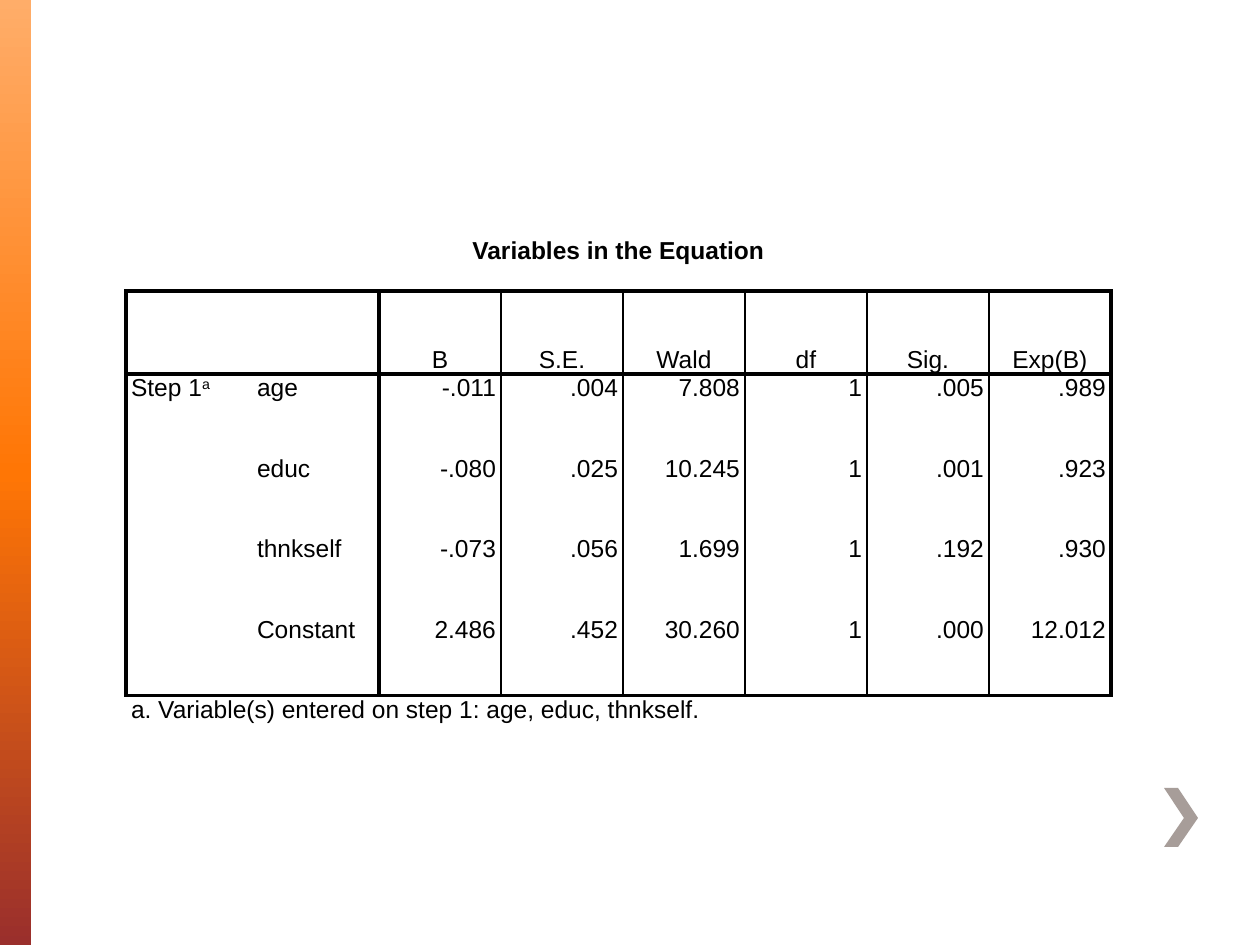
from copy import deepcopy

from lxml import etree
from pptx import Presentation
from pptx.dml.color import RGBColor
from pptx.enum.shapes import MSO_SHAPE
from pptx.enum.text import MSO_ANCHOR, PP_ALIGN
from pptx.oxml.ns import qn
from pptx.util import Pt

SCALE = 914400 / 126
RECT = MSO_SHAPE.RECTANGLE
LEFT, CENTER, RIGHT = PP_ALIGN.LEFT, PP_ALIGN.CENTER, PP_ALIGN.RIGHT
TOP, MIDDLE, BOTTOM = MSO_ANCHOR.TOP, MSO_ANCHOR.MIDDLE, MSO_ANCHOR.BOTTOM

BLACK = RGBColor(0x00, 0x00, 0x00)
WHITE = RGBColor(0xFF, 0xFF, 0xFF)
TAUPE = RGBColor(0xA7, 0x9D, 0x99)
PEACH = RGBColor(0xFF, 0xAD, 0x69)
ORANGE = RGBColor(0xFF, 0x76, 0x05)
BRICK = RGBColor(0x9A, 0x2F, 0x2C)

SIDEBAR_STOPS = [(0, PEACH), (0.5, ORANGE), (1, BRICK)]
CHEVRON = [(1178, 788), (1164, 788), (1184, 818),
           (1164, 847), (1178, 847), (1198, 818)]

COLUMNS = [126, 127] + [122] * 6
ROWS = [81, 83, 81, 80, 81, 80, 81]
TITLE = "Variables in the Equation"
HEADINGS = ["B", "S.E.", "Wald", "df", "Sig.", "Exp(B)"]
ESTIMATES = [
    ("age", "-.011", ".004", "7.808", "1", ".005", ".989"),
    ("educ", "-.080", ".025", "10.245", "1", ".001", ".923"),
    ("thnkself", "-.073", ".056", "1.699", "1", ".192", ".930"),
    ("Constant", "2.486", ".452", "30.260", "1", ".000", "12.012"),
]
FOOTNOTE = "a. Variable(s) entered on step 1: age, educ, thnkself."
MERGES = [((0, 0), (0, 7)), ((1, 0), (1, 1)), ((2, 0), (5, 0)), ((6, 0), (6, 7))]
THICK, THIN = 2.25, 1
ROW_RULES = {1: THICK, 2: THICK, 6: THICK}
COLUMN_RULES = {0: THICK, 2: THICK, 8: THICK, **dict.fromkeys(range(3, 8), THIN)}


def px(n):
    return round(n * SCALE)


def set_format(obj, values):
    for name, value in values.items():
        setattr(obj, name, value)


def add_sidebar(slide):
    sp = slide.shapes.add_shape(RECT, 0, 0, px(31), px(945))
    sp.shadow.inherit = False
    sp.line.fill.background()
    sp.fill.gradient()
    sp.fill.gradient_angle = 270
    stops = sp._element.spPr.find(qn("a:gradFill")).find(qn("a:gsLst"))
    stops.append(deepcopy(stops[0]))
    for stop, (position, color) in zip(sp.fill.gradient_stops, SIDEBAR_STOPS):
        stop.position = position
        stop.color.rgb = color


def add_chevron(slide):
    builder = slide.shapes.build_freeform(*CHEVRON[0], scale=SCALE)
    builder.add_line_segments(CHEVRON[1:], close=True)
    sp = builder.convert_to_shape()
    sp.shadow.inherit = False
    sp.fill.solid()
    sp.fill.fore_color.rgb = TAUPE
    sp.line.fill.background()


def set_border(cell, side, width):
    tcPr = cell._tc.get_or_add_tcPr()
    ln = etree.SubElement(tcPr, qn(f"a:ln{side}"))
    if width:
        ln.set("w", str(Pt(width)))
        fill = etree.SubElement(ln, qn("a:solidFill"))
        etree.SubElement(fill, qn("a:srgbClr"), val=str(BLACK))
    else:
        etree.SubElement(ln, qn("a:noFill"))


def style_cell(cell, row, col):
    verticals = COLUMN_RULES if 1 <= row <= 5 else {}
    set_border(cell, "L", verticals.get(col))
    set_border(cell, "R", verticals.get(col + cell.span_width))
    set_border(cell, "T", ROW_RULES.get(row))
    set_border(cell, "B", ROW_RULES.get(row + cell.span_height))
    cell.fill.solid()
    cell.fill.fore_color.rgb = WHITE
    set_format(cell, {"margin_left": 0, "margin_right": 0,
                      "margin_top": 0, "margin_bottom": 0})


def write_cell(cell, text, align=LEFT, anchor=TOP, bold=False, superscript=""):
    cell.vertical_anchor = anchor
    p = cell.text_frame.paragraphs[0]
    pPr = p._p.get_or_add_pPr()
    for side in ("marL", "marR"):
        pPr.set(side, str(px(5)))
    pPr.set("indent", "0")
    set_format(p, {"alignment": align, "line_spacing": Pt(16)})
    for part in filter(None, (text, superscript)):
        r = p.add_run()
        r.text = part
        set_format(r.font, {"name": "Arial", "size": Pt(14), "bold": bold})
        r.font.color.rgb = BLACK
    if superscript:
        r._r.get_or_add_rPr().set("baseline", "30000")


def add_estimates_table(slide):
    frame = slide.shapes.add_table(len(ROWS), len(COLUMNS), px(126), px(210),
                                   px(sum(COLUMNS)), px(sum(ROWS)))
    table = frame.table
    set_format(table, {"first_row": False, "horz_banding": False})
    for column, width in zip(table.columns, COLUMNS):
        column.width = px(width)
    for row, height in zip(table.rows, ROWS):
        row.height = px(height)
    for first, last in MERGES:
        table.cell(*first).merge(table.cell(*last))
    for row in range(len(ROWS)):
        for col in range(len(COLUMNS)):
            style_cell(table.cell(row, col), row, col)

    write_cell(table.cell(0, 0), TITLE, CENTER, MIDDLE, bold=True)
    for col, heading in enumerate(HEADINGS, 2):
        write_cell(table.cell(1, col), heading, CENTER, BOTTOM)
    write_cell(table.cell(2, 0), "Step 1", superscript="a")
    for row, (variable, *values) in enumerate(ESTIMATES, 2):
        write_cell(table.cell(row, 1), variable)
        for col, value in enumerate(values, 2):
            write_cell(table.cell(row, col), value, RIGHT)
    write_cell(table.cell(6, 0), FOOTNOTE)


def main():
    prs = Presentation()
    set_format(prs, {"slide_width": px(1260), "slide_height": px(945)})
    slide = prs.slides.add_slide(prs.slide_layouts[6])
    add_sidebar(slide)
    add_chevron(slide)
    add_estimates_table(slide)
    prs.save("out.pptx")


if __name__ == "__main__":
    main()
